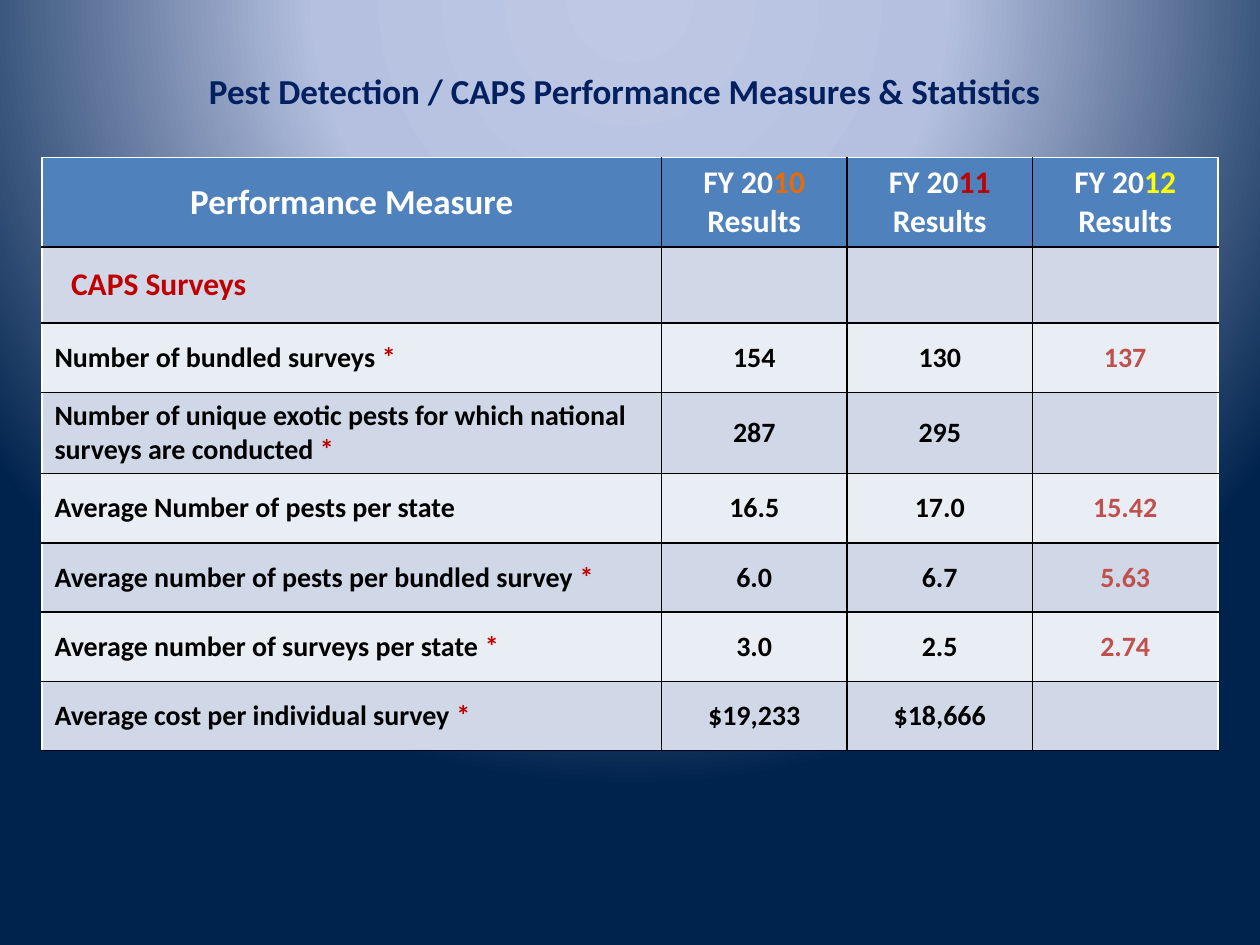
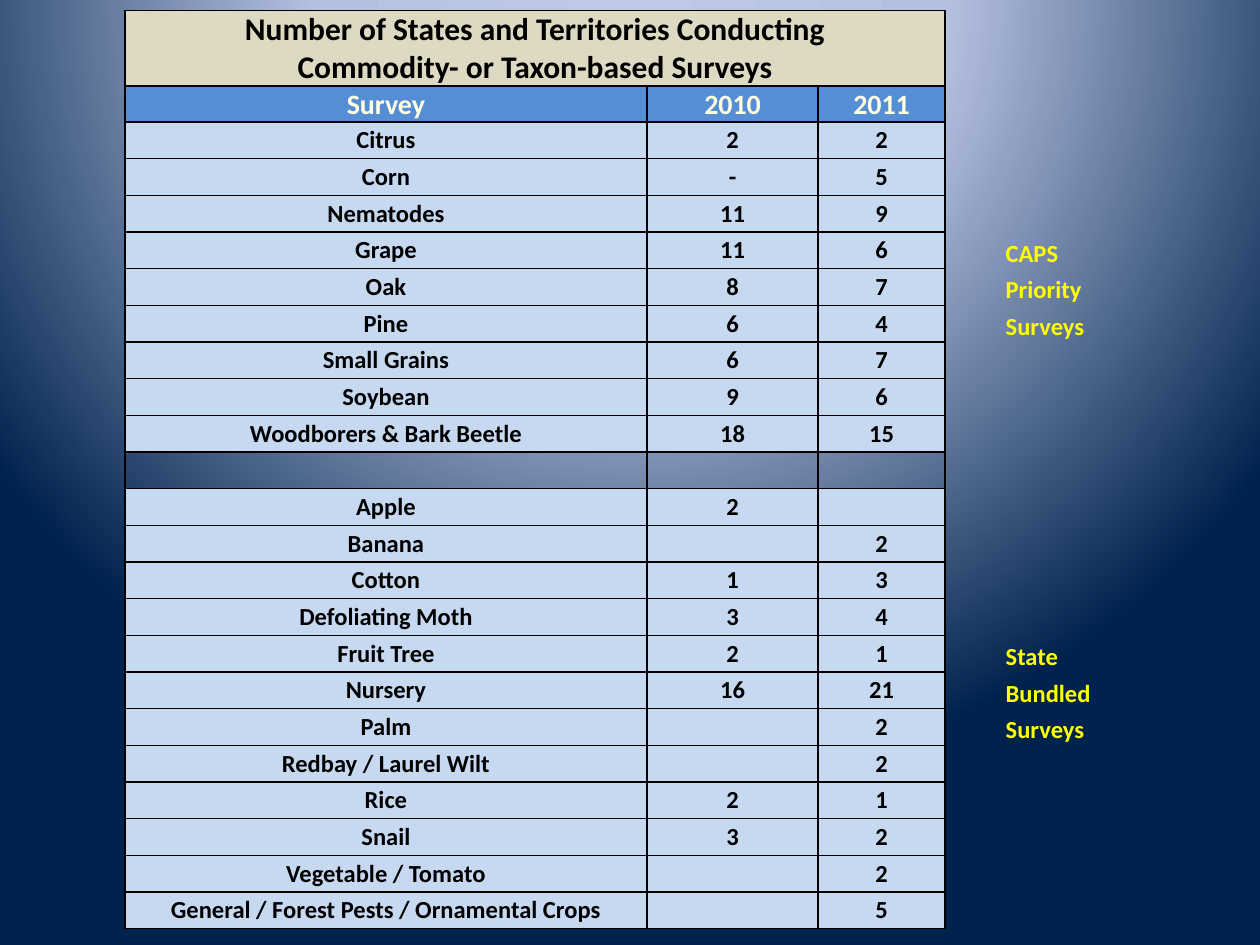
from lxml.etree import SubElement
from pptx import Presentation
from pptx.dml.color import RGBColor
from pptx.enum.text import MSO_ANCHOR, PP_ALIGN
from pptx.oxml import parse_xml
from pptx.oxml.ns import nsdecls, qn
from pptx.util import Pt

FONT = "Calibri"
BLACK = RGBColor(0x00, 0x00, 0x00)
WHITE = RGBColor(0xFF, 0xFF, 0xFF)
NAVY = RGBColor(0x00, 0x20, 0x60)
RED = RGBColor(0xC0, 0x00, 0x00)
BRICK = RGBColor(0xC0, 0x50, 0x4D)
ORANGE = RGBColor(0xE4, 0x6C, 0x0A)
YELLOW = RGBColor(0xFF, 0xFF, 0x00)
CREAM = RGBColor(0xFF, 0xFF, 0xE1)
HEADER_BLUE = RGBColor(0x4F, 0x81, 0xBD)
BAND_DARK = RGBColor(0xD0, 0xD8, 0xE8)
BAND_LIGHT = RGBColor(0xE9, 0xED, 0xF4)
TAN = RGBColor(0xDD, 0xD9, 0xC3)
SURVEY_BLUE = RGBColor(0x55, 0x8E, 0xD5)
SURVEY_LIGHT = RGBColor(0xC6, 0xD9, 0xF1)
BACKGROUND_STOPS = [
    (0, RGBColor(0xBF, 0xC9, 0xE5)),
    (40, RGBColor(0xB5, 0xC0, 0xE0)),
    (100, RGBColor(0x00, 0x23, 0x4D)),
]
NO_STYLE = "{2D5ABB26-0587-4C30-8999-92F81FD0307C}"
ALL_BLACK = dict.fromkeys("LRTB", BLACK)

MEASURES = [
    ("Number of bundled surveys ", "*", "154", "130", "137"),
    ("Number of unique exotic pests for which national surveys are conducted ",
     "*", "287", "295", ""),
    ("Average Number of pests per state", "", "16.5", "17.0", "15.42"),
    ("Average number of pests per bundled survey ", "*", "6.0", "6.7", "5.63"),
    ("Average number of surveys per state ", "*", "3.0", "2.5", "2.74"),
    ("Average cost per individual survey ", "*", "$19,233", "$18,666", ""),
]
SURVEY_TITLE = [
    "Number of States and Territories Conducting",
    "Commodity- or Taxon-based Surveys",
]
PRIORITY_SURVEYS = [
    ("Citrus", "2", "2"), ("Corn", "-", "5"), ("Nematodes", "11", "9"),
    ("Grape", "11", "6"), ("Oak", "8", "7"), ("Pine", "6", "4"),
    ("Small Grains", "6", "7"), ("Soybean", "9", "6"),
    ("Woodborers & Bark Beetle", "18", "15"),
]
BUNDLED_SURVEYS = [
    ("Apple", "2", ""), ("Banana", "", "2"), ("Cotton", "1", "3"),
    ("Defoliating Moth", "3", "4"), ("Fruit Tree", "2", "1"),
    ("Nursery", "16", "21"), ("Palm", "", "2"),
    ("Redbay / Laurel Wilt", "", "2"), ("Rice", "2", "1"), ("Snail", "3", "2"),
    ("Vegetable / Tomato", "", "2"),
    ("General / Forest Pests / Ornamental Crops", "", "5"),
]
# Side labels by the table row where each one starts
SIDE_LABELS = {
    6: ["CAPS", "Priority", "Surveys"],
    17: ["State", "Bundled", "Surveys"],
}


def set_format(target, values):
    for name, value in values.items():
        setattr(target, name, value)


def set_background(master):
    master.background.fill.gradient()
    gradient = master.element.find(".//" + qn("a:gradFill"))
    stops = "".join(
        f'<a:gs pos="{position * 1000}"><a:srgbClr val="{color}"/></a:gs>'
        for position, color in BACKGROUND_STOPS
    )
    gradient.getparent().replace(gradient, parse_xml(
        f'<a:gradFill {nsdecls("a")} rotWithShape="1"><a:gsLst>{stops}</a:gsLst>'
        '<a:path path="circle"><a:fillToRect l="50000" t="-80000" r="50000" '
        'b="180000"/></a:path></a:gradFill>'
    ))


def add_runs(paragraph, runs, size):
    for text, color in runs:
        run = paragraph.add_run()
        run.text = text
        set_format(run.font, {"name": FONT, "size": Pt(size), "bold": True})
        run.font.color.rgb = color


def set_borders(cell, edges):
    properties = cell._tc.get_or_add_tcPr()
    for side in "LRTB":
        line = SubElement(properties, qn(f"a:ln{side}"), w=str(Pt(1)))
        if side in edges:
            fill = SubElement(line, qn("a:solidFill"))
            SubElement(fill, qn("a:srgbClr"), val=str(edges[side]))
        else:
            SubElement(line, qn("a:noFill"))


def write_cell(cell, runs, size, fill=None, edges=ALL_BLACK,
               align=PP_ALIGN.CENTER, **cell_format):
    set_borders(cell, edges)
    if fill is None:
        cell.fill.background()
    else:
        cell.fill.solid()
        cell.fill.fore_color.rgb = fill
    set_format(cell, {"vertical_anchor": MSO_ANCHOR.MIDDLE, **cell_format})
    paragraph = cell.text_frame.paragraphs[0]
    paragraph.alignment = align
    runs = [run for run in runs if run[0]]
    add_runs(paragraph, runs, size)
    if not runs:  # an empty cell must not stretch its row
        SubElement(paragraph._p, qn("a:endParaRPr"), sz=str(size * 100))


def add_plain_table(slide, left, top, widths, heights):
    frame = slide.shapes.add_table(len(heights), len(widths), Pt(left), Pt(top),
                                   Pt(sum(widths)), Pt(sum(heights)))
    table = frame.table
    set_format(table, {"first_row": False, "horz_banding": False})
    frame._element.find(".//" + qn("a:tableStyleId")).text = NO_STYLE
    for column, width in zip(table.columns, widths):
        column.width = Pt(width)
    for row, height in zip(table.rows, heights):
        row.height = Pt(height)
    return table


def add_title(slide, left, top, width, height):
    box = slide.shapes.add_textbox(Pt(left), Pt(top), Pt(width), Pt(height))
    box.text_frame.word_wrap = False
    paragraph = box.text_frame.paragraphs[0]
    add_runs(paragraph, [
        ("Pest Detection / CAPS Performance Measures & Statistics", NAVY)], 20)
    # Soft shadow under the letters
    fill = paragraph.runs[0].font._element.find(qn("a:solidFill"))
    fill.addnext(parse_xml(
        f'<a:effectLst {nsdecls("a")}><a:outerShdw blurRad="38100" dist="38100" '
        'dir="2700000" algn="tl"><a:srgbClr val="000000"><a:alpha val="43000"/>'
        '</a:srgbClr></a:outerShdw></a:effectLst>'
    ))


def add_measures_table(slide, left, top):
    widths = [354, 106, 106, 106]
    heights = [50.5, 43.5, 39.6, 45.7] + [39.6] * 4
    table = add_plain_table(slide, left, top, widths, heights)

    # Header row
    rows = [[[("Performance Measure", WHITE)]] + [
        [("FY 20", WHITE), (year, color), (" Results", WHITE)]
        for year, color in [("10", ORANGE), ("11", RED), ("12", YELLOW)]
    ]]
    # Section row, then the measures
    rows.append([[("CAPS Surveys", RED)], [], [], []])
    for name, mark, *results in MEASURES:
        rows.append([[(name, BLACK), (mark, RED)]] + [
            [(result, color)]
            for result, color in zip(results, [BLACK, BLACK, BRICK])
        ])

    for row, cells in enumerate(rows):
        for column, runs in enumerate(cells):
            edges = dict(ALL_BLACK)
            if row == 0:
                edges["T"] = WHITE
            if column == 0:
                edges["L"] = WHITE
            if column == len(widths) - 1:
                edges["R"] = WHITE
            fill = HEADER_BLUE if row == 0 else [BAND_LIGHT, BAND_DARK][row % 2]
            size = 20 if row == column == 0 else 18 if row < 2 else 16
            is_name = row > 0 and column == 0
            write_cell(table.cell(row, column), runs, size, fill, edges,
                       PP_ALIGN.LEFT if is_name else PP_ALIGN.CENTER,
                       margin_left=Pt(16.6 if is_name and row == 1 else 7.2))


def add_survey_table(slide, left, top):
    surveys = PRIORITY_SURVEYS + [("", "", "")] + BUNDLED_SURVEYS
    widths = [298.3, 97.8, 72.6, 34.6, 72.6]
    heights = [21.6, 21.6, 20.5] + [20.95] * len(surveys)
    table = add_plain_table(slide, left, top, widths, heights)
    tight = dict.fromkeys(
        ["margin_left", "margin_right", "margin_top", "margin_bottom"], 0)
    low = {**tight, "vertical_anchor": MSO_ANCHOR.BOTTOM}

    # Two title rows joined into one band
    for row, (text, outer) in enumerate(zip(SURVEY_TITLE, "TB")):
        table.cell(row, 0).merge(table.cell(row, 2))
        for column in range(3):
            write_cell(table.cell(row, column),
                       [(text, BLACK)] if column == 0 else [], 18, TAN,
                       dict.fromkeys("LR" + outer, BLACK), **low)

    # Column heads
    for column, text in enumerate(["Survey", "2010", "2011"]):
        write_cell(table.cell(2, column), [(text, CREAM)], 16, SURVEY_BLUE, **low)

    # Survey counts, with a clear row between the two groups
    for row, survey in enumerate(surveys, 3):
        fill = SURVEY_LIGHT if any(survey) else None
        for column, text in enumerate(survey):
            write_cell(table.cell(row, column), [(text, BLACK)], 14, fill, **tight)

    # Open columns with the group labels
    labels = {start + offset: text for start, words in SIDE_LABELS.items()
              for offset, text in enumerate(words)}
    for row in range(len(heights)):
        write_cell(table.cell(row, 3), [], 14, None, {"L": BLACK}, **tight)
        write_cell(table.cell(row, 4), [(labels.get(row, ""), YELLOW)], 14, None,
                   {}, PP_ALIGN.LEFT, **low)


def main():
    presentation = Presentation()
    set_format(presentation, {"slide_width": Pt(720), "slide_height": Pt(540)})
    set_background(presentation.slide_master)
    blank = presentation.slide_layouts[6]

    measures_slide = presentation.slides.add_slide(blank)
    add_measures_table(measures_slide, 24, 90)
    add_title(measures_slide, 112.3, 36, 494, 31.5)

    survey_slide = presentation.slides.add_slide(blank)
    add_survey_table(survey_slide, 71.4, 6)

    presentation.save("out.pptx")


if __name__ == "__main__":
    main()
